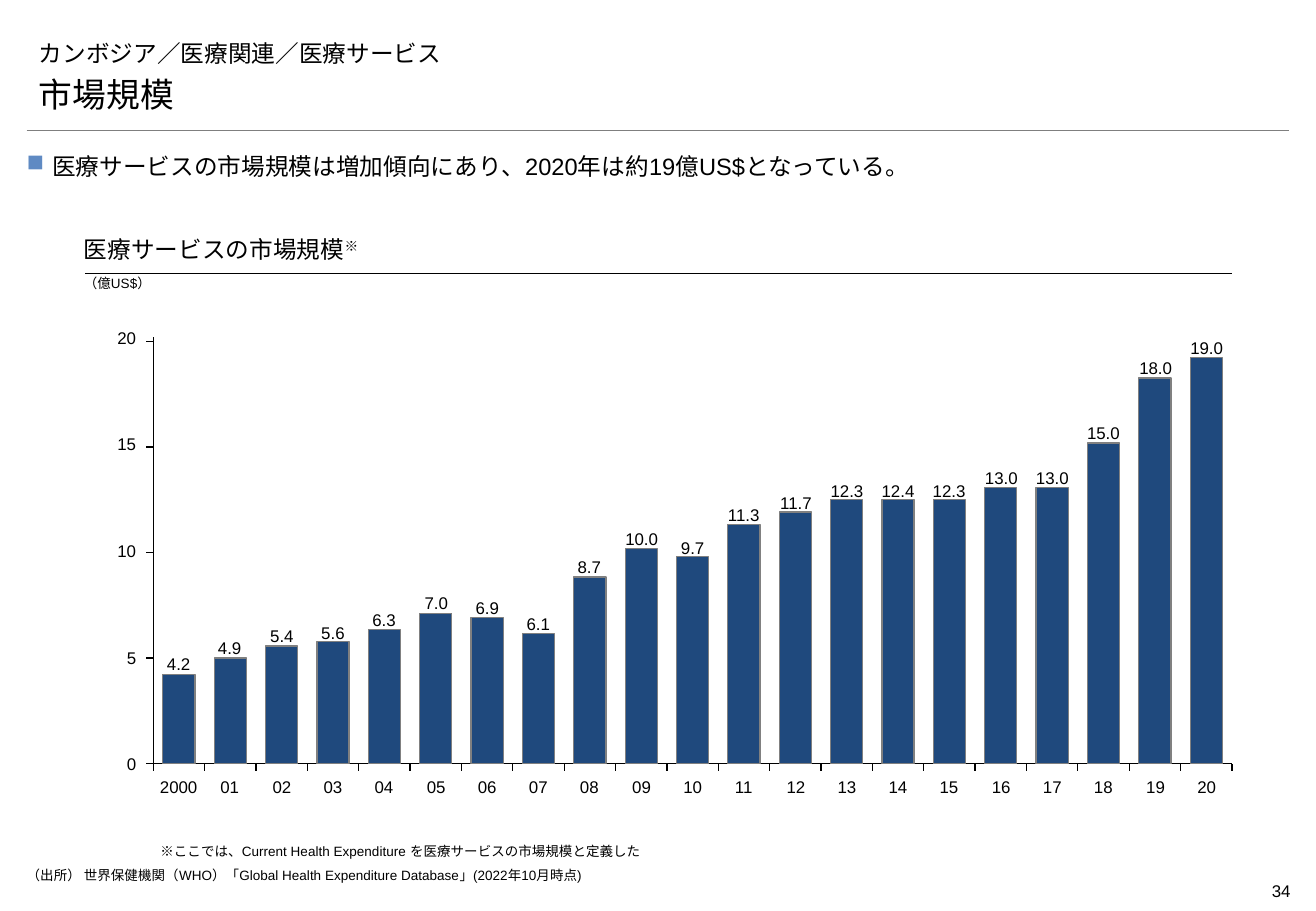
from dataclasses import dataclass

from lxml import etree
from pptx import Presentation
from pptx import util as u
from pptx.chart.data import CategoryChartData
from pptx.dml.color import RGBColor
from pptx.enum import chart as charts, shapes, text
from pptx.oxml.ns import qn


@dataclass(frozen=True)
class Theme:
    ink: str = "000000"
    rule: str = "7F7F7F"
    bullet: str = "5F8AC3"
    bar: str = "1F497D"
    bar_edge: str = "808080"
    body_font: str = "Arial"
    heading_font: str = "Montserrat"
    title: int = 20
    heading: int = 14
    label: int = 10
    note: int = 8


THEME = Theme()
PX_EMU = 9144

CHART_BOX = (117, 269, 906, 369)
PLOT_LEFT, PLOT_TOP, PLOT_WIDTH, PLOT_HEIGHT = 126, 278, 888, 351
PLOT_BOTTOM = PLOT_TOP + PLOT_HEIGHT
INDEX_MAX, INDEX_STEP = 105, 26
LABEL_HEIGHT = 17
DIGIT_WIDTH = 8

YEARS = ["2000"] + [f"{year:02d}" for year in range(1, 21)]
AMOUNTS = ["4.2", "4.9", "5.4", "5.6", "6.3", "7.0", "6.9", "6.1", "8.7", "10.0", "9.7",
           "11.3", "11.7", "12.3", "12.4", "12.3", "13.0", "13.0", "15.0", "18.0", "19.0"]
BAR_INDEX = [22, 26, 29, 30, 33, 37, 36, 32, 46, 53, 51,
             59, 62, 65, 65, 65, 68, 68, 79, 95, 100]
AXIS_AMOUNTS = ["0", "5", "10", "15", "20"]

LEFT, CENTER, RIGHT = text.PP_ALIGN.LEFT, text.PP_ALIGN.CENTER, text.PP_ALIGN.RIGHT
TOP, MIDDLE, BOTTOM = text.MSO_ANCHOR.TOP, text.MSO_ANCHOR.MIDDLE, text.MSO_ANCHOR.BOTTOM


def px(length):
    return u.Emu(round(length) * PX_EMU)


def color(value):
    return RGBColor.from_string(value)


def add_run(paragraph, content, size, font):
    run = paragraph.add_run()
    run.text = content
    run.font.size = u.Pt(size)
    run.font.name = font
    run.font.color.rgb = color(THEME.ink)
    return run


def add_text(slide, box, content, size=THEME.label, font=THEME.body_font, align=LEFT,
             anchor=TOP, insets=(0, 0, 0, 0), wrap=True, hanging=0):
    frame = slide.shapes.add_textbox(*map(px, box)).text_frame
    frame.word_wrap = wrap
    frame.vertical_anchor = anchor
    frame.margin_left, frame.margin_top, frame.margin_right, frame.margin_bottom = map(px, insets)
    paragraph = frame.paragraphs[0]
    paragraph.alignment = align
    if hanging:
        properties = paragraph._p.get_or_add_pPr()
        properties.set("marL", str(px(hanging)))
        properties.set("indent", str(-px(hanging)))
    add_run(paragraph, content, size, font)
    return paragraph


def add_square_bullet(paragraph):
    properties = paragraph._p.get_or_add_pPr()
    bullet_color = etree.SubElement(properties, qn("a:buClr"))
    etree.SubElement(bullet_color, qn("a:srgbClr"), val=THEME.bullet)
    etree.SubElement(properties, qn("a:buChar"), char="■")


def add_rule(slide, left, right, y, line_color, weight):
    connector = slide.shapes.add_connector(
        shapes.MSO_CONNECTOR.STRAIGHT, px(left), px(y), px(right), px(y))
    connector.line.color.rgb = color(line_color)
    connector.line.width = u.Pt(weight)
    etree.SubElement(connector._element.spPr, qn("a:effectLst"))


def set_plot_area(chart):
    left, top, width, height = CHART_BOX
    plot_area = chart._chartSpace.chart.plotArea
    for old_layout in plot_area.findall(qn("c:layout")):
        plot_area.remove(old_layout)
    layout = etree.Element(qn("c:layout"))
    manual = etree.SubElement(layout, qn("c:manualLayout"))
    settings = {
        "layoutTarget": "inner", "xMode": "edge", "yMode": "edge",
        "x": round((PLOT_LEFT - left) / width, 3), "y": round((PLOT_TOP - top) / height, 3),
        "w": round(PLOT_WIDTH / width, 3), "h": round(PLOT_HEIGHT / height, 3),
    }
    for name, value in settings.items():
        etree.SubElement(manual, qn(f"c:{name}"), val=str(value))
    plot_area.insert(0, layout)


def style_axis(axis):
    axis.has_major_gridlines = False
    axis.major_tick_mark = charts.XL_TICK_MARK.OUTSIDE
    axis.minor_tick_mark = charts.XL_TICK_MARK.NONE
    axis.tick_label_position = charts.XL_TICK_LABEL_POSITION.NONE
    axis.format.line.color.rgb = color(THEME.ink)
    axis.format.line.width = u.Pt(0.75)


def add_market_chart(slide):
    data = CategoryChartData()
    data.categories = [str(number) for number in range(1, len(BAR_INDEX) + 1)]
    data.add_series("Series 1", BAR_INDEX)
    chart = slide.shapes.add_chart(
        charts.XL_CHART_TYPE.COLUMN_STACKED, *map(px, CHART_BOX), data).chart
    chart.has_legend = False
    chart.has_title = False
    chart.font.name = THEME.body_font
    chart.font.size = u.Pt(THEME.label)
    chart.font.color.rgb = color(THEME.ink)
    style_axis(chart.category_axis)
    style_axis(chart.value_axis)
    chart.value_axis.minimum_scale = 0
    chart.value_axis.maximum_scale = INDEX_MAX
    chart.value_axis.major_unit = INDEX_STEP
    plot = chart.plots[0]
    plot.gap_width = 60
    plot.overlap = 100
    plot.vary_by_categories = False
    bars = plot.series[0].format
    bars.fill.solid()
    bars.fill.fore_color.rgb = color(THEME.bar)
    bars.line.color.rgb = color(THEME.bar_edge)
    bars.line.width = u.Pt(0.75)
    set_plot_area(chart)


def add_centered_label(slide, center, top, content, **formatting):
    width = DIGIT_WIDTH * len(content)
    add_text(slide, (center - width / 2, top, width, LABEL_HEIGHT), content,
             align=CENTER, wrap=False, **formatting)


def add_chart_labels(slide):
    axis_step = PLOT_HEIGHT / (len(AXIS_AMOUNTS) - 1)
    for position, amount in enumerate(AXIS_AMOUNTS):
        width = DIGIT_WIDTH * len(amount)
        middle = PLOT_BOTTOM - position * axis_step
        add_text(slide, (112 - width, middle - LABEL_HEIGHT / 2, width, LABEL_HEIGHT),
                 amount, align=RIGHT, anchor=MIDDLE, wrap=False)
    year_step = PLOT_WIDTH / len(YEARS)
    for position, (year, amount, index) in enumerate(zip(YEARS, AMOUNTS, BAR_INDEX)):
        center = PLOT_LEFT + (position + 0.5) * year_step
        bar_top = PLOT_BOTTOM - PLOT_HEIGHT * index / INDEX_MAX
        add_centered_label(slide, center, 639, year)
        add_centered_label(slide, center, bar_top - LABEL_HEIGHT, amount,
                           anchor=BOTTOM, insets=(2, 0, 2, 0))


def add_header(slide):
    add_rule(slide, 22, 1061, 107, THEME.rule, 0.25)
    heading = dict(font=THEME.heading_font, anchor=BOTTOM, insets=(10, 5, 10, 5))
    add_text(slide, (22, 21, 1039, 39), "カンボジア／医療関連／医療サービス",
             size=THEME.heading, **heading)
    add_text(slide, (22, 60, 1040, 39), "市場規模", size=THEME.title, **heading)
    message = add_text(
        slide, (22, 123, 1039, 24),
        "医療サービスの市場規模は増加傾向にあり、2020年は約19億US$となっている。",
        size=THEME.heading, align=text.PP_ALIGN.JUSTIFY, hanging=21)
    add_square_bullet(message)
    message.line_spacing = 1.1
    message.space_after = u.Pt(2)


def add_chart_heading(slide):
    add_rule(slide, 70, 1014, 225, THEME.ink, 0.75)
    heading = add_text(slide, (69, 194, 945, 31), "医療サービスの市場規模", size=THEME.heading,
                       font=THEME.heading_font, anchor=BOTTOM, insets=(0, 5, 0, 8))
    mark = add_run(heading, "※", THEME.heading, THEME.heading_font)
    mark._r.get_or_add_rPr().set("baseline", "30000")
    add_text(slide, (69, 225, 91, 16), "（億US$）", size=THEME.note, anchor=MIDDLE)


def add_footer(slide):
    add_text(slide, (132, 694, 835, 13),
             "※ここでは、Current Health Expenditure を医療サービスの市場規模と定義した", size=THEME.note)
    add_text(slide, (22, 714, 614, 16),
             "（出所） 世界保健機関（WHO）「Global Health Expenditure Database」(2022年10月時点)",
             size=THEME.note, hanging=49)
    add_text(slide, (983, 720, 79, 27), "34", align=RIGHT, insets=(0, 5, 0, 5))


def main():
    presentation = Presentation()
    presentation.slide_width, presentation.slide_height = px(1083), px(750)
    slide = presentation.slides.add_slide(presentation.slide_layouts[6])
    add_header(slide)
    add_chart_heading(slide)
    add_market_chart(slide)
    add_chart_labels(slide)
    add_footer(slide)
    presentation.save("out.pptx")


if __name__ == "__main__":
    main()
